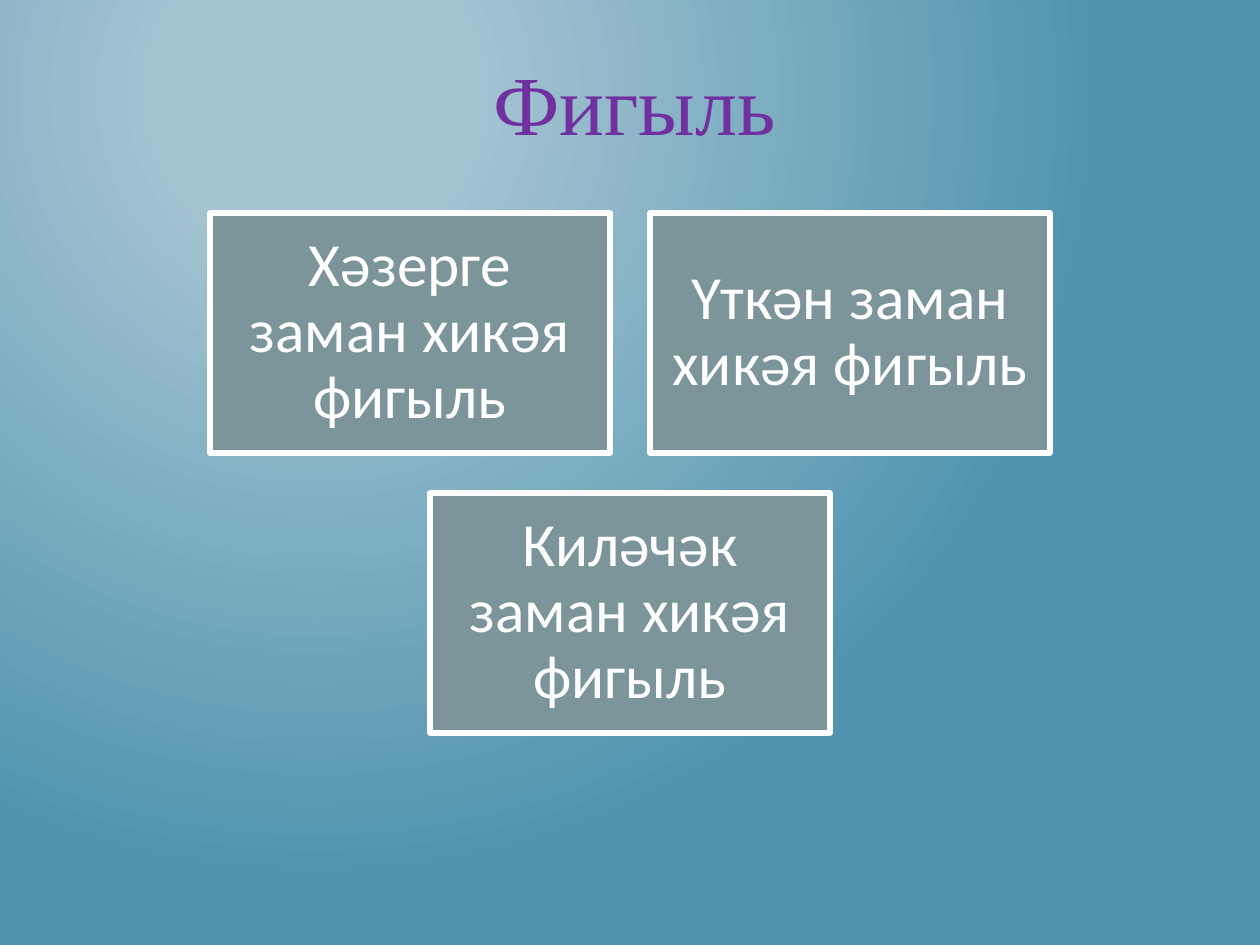
"""Build the slide on the three tense forms of the verb."""
from pptx import Presentation
from pptx.dml.color import RGBColor
from pptx.enum.shapes import MSO_SHAPE as Preset
from pptx.enum.text import MSO_ANCHOR as Anchor, MSO_AUTO_SIZE as AutoSize, PP_ALIGN as Align
from pptx.oxml import parse_xml
from pptx.oxml.ns import nsdecls
from pptx.util import Emu, Pt

PX_PER_INCH = 126
SLIDE_WIDTH, SLIDE_HEIGHT = 1260, 945
BOX_WIDTH, BOX_HEIGHT, GAP = 400, 240, 40
FIRST_ROW_TOP = 213
TENSE_ROWS = [
    ["Хәзерге заман хикәя фигыль", "Үткән заман хикәя фигыль"],
    ["Киләчәк заман хикәя фигыль"],
]


def px(length):
    """Turn pixels into EMU."""
    return Emu(round(length * 914400 / PX_PER_INCH))


def color(value):
    """Turn a hex string into a colour."""
    return RGBColor.from_string(value)


def set_background(slide, inner, outer):
    """Give the slide a circular gradient centred near its top left."""
    background = parse_xml(
        f'<p:bg {nsdecls("p", "a")}><p:bgPr><a:gradFill rotWithShape="1"><a:gsLst>'
        f'<a:gs pos="20000"><a:srgbClr val="{inner}"/></a:gs>'
        f'<a:gs pos="100000"><a:srgbClr val="{outer}"/></a:gs></a:gsLst>'
        '<a:path path="circle"><a:fillToRect l="50000" t="20000" r="100000" b="100000"/>'
        '</a:path></a:gradFill><a:effectLst/></p:bgPr></p:bg>'
    )
    slide.element.cSld.insert(0, background)


def write(frame, text, font_name, size, font_color):
    """Write one centred run and return its paragraph."""
    paragraph = frame.paragraphs[0]
    paragraph.alignment = Align.CENTER
    run = paragraph.add_run()
    run.text = text
    run.font.name = font_name
    run.font.size = Pt(size)
    run.font.color.rgb = color(font_color)
    return paragraph


def set_title(slide, text):
    """Place and format the title."""
    title = slide.shapes.title
    title.left, title.top, title.width, title.height = map(px, (94, 45, 1081, 115))
    frame = title.text_frame
    frame.word_wrap = True
    frame.auto_size = AutoSize.SHAPE_TO_FIT_TEXT
    frame.vertical_anchor = Anchor.TOP
    write(frame, text, "Times New Roman", 48, "7030A0")


def add_tense_box(slide, left, top, text):
    """Add a white-edged box that names a tense."""
    box = slide.shapes.add_shape(Preset.RECTANGLE, px(left), px(top), px(BOX_WIDTH), px(BOX_HEIGHT))
    box.shadow.inherit = False
    box.fill.solid()
    box.fill.fore_color.rgb = color("7C959A")
    box.line.color.rgb = color("FFFFFF")
    box.line.width = Pt(3)
    frame = box.text_frame
    frame.word_wrap = True
    frame.vertical_anchor = Anchor.MIDDLE
    frame.margin_left = frame.margin_right = frame.margin_top = frame.margin_bottom = px(19)
    write(frame, text, "Calibri", 35, "FFFFFF").line_spacing = 0.9


def add_tense_rows(slide):
    """Centre each row of tense boxes on the slide."""
    for row, tenses in enumerate(TENSE_ROWS):
        row_width = len(tenses) * (BOX_WIDTH + GAP) - GAP
        row_left = (SLIDE_WIDTH - row_width) // 2
        top = FIRST_ROW_TOP + row * (BOX_HEIGHT + GAP)
        for column, tense in enumerate(tenses):
            add_tense_box(slide, row_left + column * (BOX_WIDTH + GAP), top, tense)


def main():
    """Build and save the presentation."""
    deck = Presentation()
    deck.slide_width, deck.slide_height = px(SLIDE_WIDTH), px(SLIDE_HEIGHT)
    slide = deck.slides.add_slide(deck.slide_layouts[5])
    set_background(slide, "A3C3D1", "5194AF")
    set_title(slide, "Фигыль")
    add_tense_rows(slide)
    deck.save("out.pptx")


if __name__ == "__main__":
    main()
